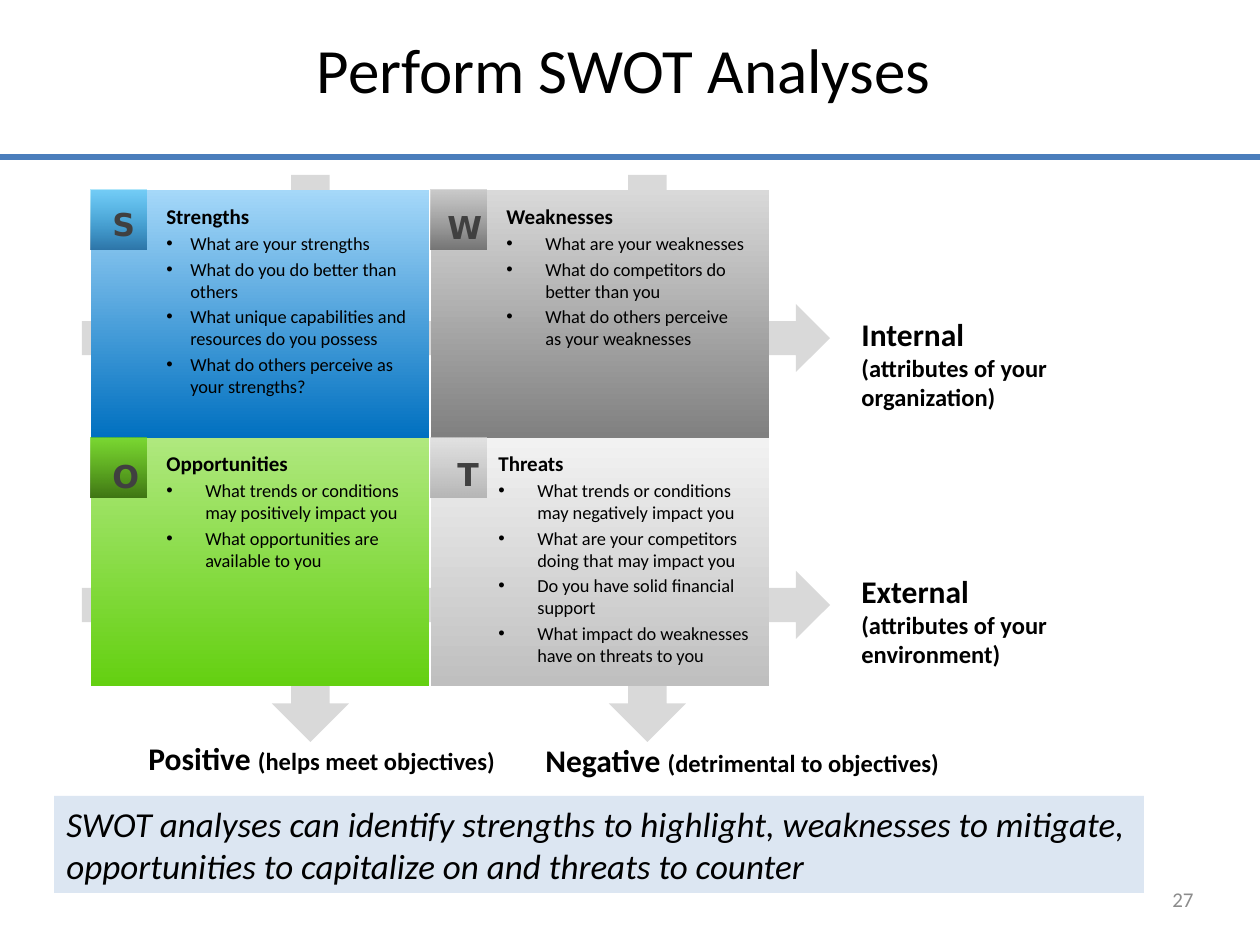
"""Build the SWOT analysis slide."""
from dataclasses import dataclass

from lxml.etree import SubElement
from pptx import Presentation
from pptx.dml.color import RGBColor as RGB
from pptx.enum.shapes import MSO_CONNECTOR as CONNECTOR, MSO_SHAPE as SHAPE
from pptx.enum.text import MSO_ANCHOR as ANCHOR, MSO_AUTO_SIZE as AUTO_SIZE, PP_ALIGN as ALIGN
from pptx.oxml.ns import qn
from pptx.util import Emu, Pt

PX = 914400 / 126


def px(length):
    return Emu(round(length * PX))


@dataclass(frozen=True)
class Theme:
    body_font: str = "Calibri"
    letter_font: str = "DejaVu Sans"
    text: str = "000000"
    letter: str = "404040"
    number: str = "8C8C8C"
    rule: str = "4B7EBC"
    arrow: str = "D9D9D9"
    banner: str = "DCE6F2"
    title_size: float = 36
    banner_size: float = 20
    label_size: float = 18
    detail_size: float = 14
    heading_size: float = 12
    bullet_size: float = 10.5
    bullet_gap: float = 2.1


class SlideBuilder:
    def __init__(self, slide, theme):
        self.slide = slide
        self.theme = theme

    def style(self, font, size, color=None, **formats):
        values = {"name": self.theme.body_font, "size": Pt(size), "bold": False, **formats}
        for name, value in values.items():
            setattr(font, name, value)
        font.color.rgb = RGB.from_string(color or self.theme.text)

    def run(self, paragraph, text, size, **formats):
        run = paragraph.add_run()
        run.text = text
        self.style(run.font, size, **formats)

    def frame(self, shape, align=ALIGN.LEFT, **formats):
        values = {"word_wrap": True, "auto_size": AUTO_SIZE.SHAPE_TO_FIT_TEXT,
                  "vertical_anchor": ANCHOR.TOP, **formats}
        for name, value in values.items():
            setattr(shape.text_frame, name, value)
        paragraph = shape.text_frame.paragraphs[0]
        paragraph.alignment = align
        return paragraph

    def title(self, box, text):
        shape = self.slide.shapes.title
        for name, value in zip(("left", "top", "width", "height"), box):
            setattr(shape, name, px(value))
        paragraph = self.frame(shape, ALIGN.CENTER, auto_size=AUTO_SIZE.NONE,
                               vertical_anchor=ANCHOR.MIDDLE)
        self.run(paragraph, text, self.theme.title_size)

    def rule(self, y, width):
        line = self.slide.shapes.add_connector(CONNECTOR.STRAIGHT, 0, px(y), px(width), px(y))
        line.line.color.rgb = RGB.from_string(self.theme.rule)
        line.line.width = Pt(3)
        SubElement(line._element.spPr, qn("a:effectLst"))

    def shape(self, kind, box, rotation=0):
        shape = self.slide.shapes.add_shape(kind, *map(px, box))
        shape.shadow.inherit = False
        shape.line.fill.background()
        shape.rotation = rotation
        return shape

    def solid(self, kind, box, color, rotation=0):
        shape = self.shape(kind, box, rotation)
        shape.fill.solid()
        shape.fill.fore_color.rgb = RGB.from_string(color)
        return shape

    def gradient(self, box, colors, opacities=()):
        shape = self.shape(SHAPE.RECTANGLE, box)
        shape.fill.gradient()
        shape.fill.gradient_angle = 270
        for stop, color in zip(shape.fill.gradient_stops, colors):
            stop.color.rgb = RGB.from_string(color)
        for color, opacity in zip(shape._element.spPr.iter(qn("a:srgbClr")), opacities):
            SubElement(color, qn("a:alpha"), val=str(opacity * 1000))

    def text(self, box, runs, align=ALIGN.LEFT, **formats):
        shape = self.slide.shapes.add_textbox(*map(px, box))
        paragraph = self.frame(shape, align, **formats)
        for text, size, font in runs:
            self.run(paragraph, text, size, **font)
        return shape

    def label(self, box, name, detail):
        bold = {"bold": True}
        self.text(box, [(name, self.theme.label_size, bold),
                        (detail, self.theme.detail_size, bold)])

    def bullets(self, box, heading, items, indent):
        shape = self.text(box, [(heading, self.theme.heading_size, {"bold": True})])
        for item in items:
            paragraph = shape.text_frame.add_paragraph()
            properties = paragraph._p.get_or_add_pPr()
            properties.set("marL", str(px(indent)))
            properties.set("indent", str(-px(indent)))
            SubElement(properties, qn("a:buFont"), typeface="Arial")
            SubElement(properties, qn("a:buChar"), char="•")
            paragraph.space_before = Pt(self.theme.bullet_gap)
            self.run(paragraph, item, self.theme.bullet_size)

    def banner(self, box, text):
        shape = self.solid(SHAPE.RECTANGLE, box, self.theme.banner)
        self.run(self.frame(shape), text, self.theme.banner_size, italic=True)


QUADRANTS = [
    dict(cell=(0, 0), letter="S", heading="Strengths", indent=24,
         fill=("A5D8F9", "0070C0"), tile=("00B0F0", "004C84"), opacity=(30, 65),
         text_box=(154, 197, 265, 261), letter_box=(100, 199, 38, 50),
         items=["What are your strengths", "What do you do better than others",
                "What unique capabilities and resources do you possess",
                "What do others perceive as your strengths?"]),
    dict(cell=(0, 1), letter="O", heading="Opportunities", indent=39,
         fill=("AFE87E", "64D011"), tile=("64D011", "326609"), opacity=(70, 88),
         text_box=(154, 444, 265, 136), letter_box=(100, 451, 38, 50),
         items=["What trends or conditions may positively impact you",
                "What opportunities are available to you"]),
    dict(cell=(1, 0), letter="W", heading="Weaknesses", indent=39,
         fill=("D9D9D9", "808080"), tile=("BFBFBF", "595959"), opacity=(58, 74),
         text_box=(494, 197, 265, 213), letter_box=(435, 202, 45, 50),
         items=["What are your weaknesses", "What do competitors do better than you",
                "What do others perceive as your weaknesses"]),
    dict(cell=(1, 1), letter="T", heading="Threats", indent=39,
         fill=("F2F2F2", "BFBFBF"), tile=("D9D9D9", "A6A6A6"), opacity=(66, 75),
         text_box=(486, 444, 281, 234), letter_box=(445, 449, 38, 50),
         items=["What trends or conditions may negatively impact you",
                "What are your competitors doing that may impact you",
                "Do you have solid financial support",
                "What impact do weaknesses have on threats to you"]),
]

LABELS = [
    ((136, 733, 388, 50), "Positive ", "(helps meet objectives)"),
    ((849, 309, 223, 111), "Internal ", "(attributes of your organization)"),
    ((849, 566, 226, 111), "External ", "(attributes of your environment)"),
    ((533, 735, 428, 50), "Negative ", "(detrimental to objectives)"),
]


def main():
    presentation = Presentation()
    presentation.slide_width, presentation.slide_height = px(1260), px(945)
    theme = Theme()
    builder = SlideBuilder(presentation.slides.add_slide(presentation.slide_layouts[5]), theme)

    builder.rule(157, 1260)
    builder.title((64, 0, 1134, 136), "Perform SWOT Analyses ")
    builder.text((912, 874, 294, 50), [("27", 12, {"color": theme.number})], ALIGN.RIGHT,
                 auto_size=AUTO_SIZE.NONE, vertical_anchor=ANCHOR.MIDDLE)

    for top in (231, -36):
        builder.solid(SHAPE.DOWN_ARROW, (422, top, 68, 748), theme.arrow, rotation=270)
    for left in (609, 272):
        builder.solid(SHAPE.DOWN_ARROW, (left, 175, 77, 567), theme.arrow)

    for quadrant in QUADRANTS:
        column, row = quadrant["cell"]
        left, top = 91 + 340 * column, 190 + 248 * row
        builder.gradient((left, top, 338, 248), quadrant["fill"])
        builder.bullets(quadrant["text_box"], quadrant["heading"], quadrant["items"],
                        quadrant["indent"])
        builder.gradient((left, top, 56, 60), quadrant["tile"], quadrant["opacity"])
        letter_font = {"name": theme.letter_font, "bold": True, "color": theme.letter}
        align = ALIGN.LEFT if quadrant["letter"] == "T" else ALIGN.CENTER
        builder.text(quadrant["letter_box"],
                     [(quadrant["letter"], theme.label_size, letter_font)], align)

    for box, name, detail in LABELS:
        builder.label(box, name, detail)
    builder.banner((54, 796, 1090, 97),
                   "SWOT analyses can identify strengths to highlight, weaknesses to mitigate, "
                   "opportunities to capitalize on and threats to counter")
    presentation.save("out.pptx")


if __name__ == "__main__":
    main()
